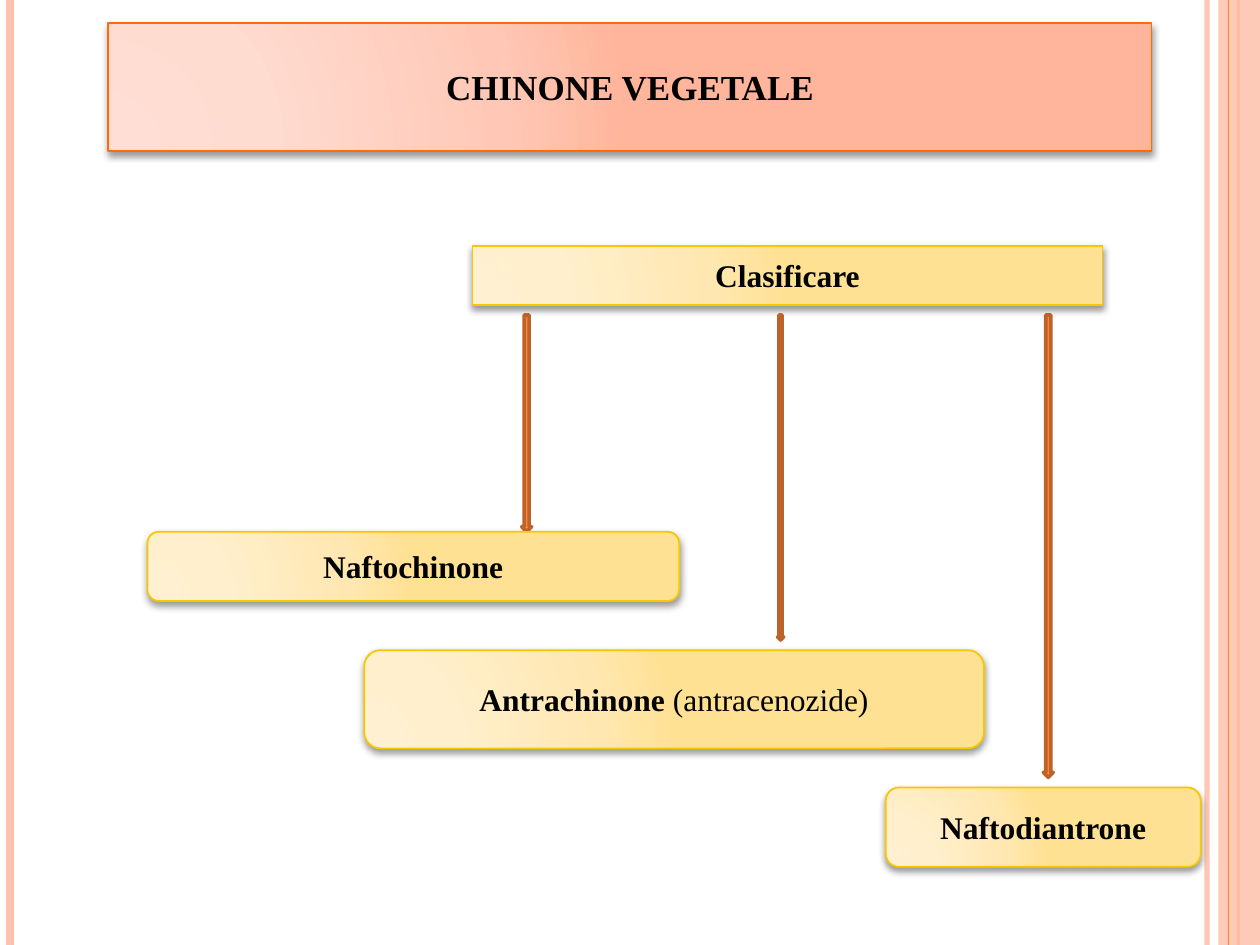
import pptx
import pptx.util
import pptx.dml.color
import pptx.enum.shapes
import pptx.enum.text
import pptx.oxml
import pptx.oxml.ns

SHAPE = pptx.enum.shapes.MSO_SHAPE
WIDTH, HEIGHT = pptx.util.Inches(10), pptx.util.Inches(7.5)
COLS, ROWS = 100, 75
FONT = "Times New Roman"
COLORS = {
    "text": "000000",
    "stripe": "FEC3AE",
    "accent": "FE8637",
    "arrow_edge": "BC6329",
    "title_edge": "FF6B0A",
    "box_edge": "F8C700",
}
GRADIENTS = {
    "title": ["FFDED5", "FFDBD0", "FFC8B6", "FFB59B"],
    "box": ["FFF0D1", "FFEFCC", "FFE7B1", "FFE193"],
}
STOPS = [0, 30, 75, 100]
NS = pptx.oxml.ns.nsdecls("a")


def x(cols):
    return round(WIDTH * cols / COLS)


def y(rows):
    return round(HEIGHT * rows / ROWS)


def rgb(name):
    return pptx.dml.color.RGBColor.from_string(COLORS[name])


def set_alpha(el, percent):
    color = el.find(".//" + pptx.oxml.ns.qn("a:srgbClr"))
    color.append(pptx.oxml.parse_xml(f'<a:alpha {NS} val="{percent * 1000}"/>'))


def add_stripe(s, col, width, color, alpha=None):
    c = s.shapes.add_connector(
        pptx.enum.shapes.MSO_CONNECTOR.STRAIGHT, x(col), 0, x(col), HEIGHT)
    c.line.color.rgb = rgb(color)
    c.line.width = pptx.util.Pt(width)
    c._element.spPr.append(pptx.oxml.parse_xml(f"<a:effectLst {NS}/>"))
    if alpha:
        set_alpha(c._element.spPr, alpha)


def add_shape(s, kind, left, top, width, height):
    sp = s.shapes.add_shape(kind, x(left), y(top), x(width), y(height))
    sp.shadow.inherit = False
    return sp


def add_band(s):
    sp = add_shape(s, SHAPE.RECTANGLE, 96.7, 0, 3.3, ROWS)
    sp.fill.solid()
    sp.fill.fore_color.rgb = rgb("stripe")
    set_alpha(sp._element.spPr, 87)
    sp.line.fill.background()


def add_arrow(s, left, width, bottom):
    top = 25
    sp = add_shape(s, SHAPE.DOWN_ARROW, left, top, width, bottom - top)
    sp.fill.solid()
    sp.fill.fore_color.rgb = rgb("accent")
    sp.line.color.rgb = rgb("arrow_edge")
    sp.line.width = pptx.util.Pt(2)


def set_gradient(sp, colors):
    stops = "".join(
        f'<a:gs pos="{pos * 1000}"><a:srgbClr val="{color}"/></a:gs>'
        for pos, color in zip(STOPS, colors))
    sp.fill.gradient()
    spPr = sp._element.spPr
    old = spPr.find(pptx.oxml.ns.qn("a:gradFill"))
    spPr.replace(old, pptx.oxml.parse_xml(
        f'<a:gradFill {NS} rotWithShape="1"><a:gsLst>{stops}</a:gsLst>'
        '<a:path path="circle"><a:fillToRect l="5000" t="100000" r="120000" b="10000"/>'
        '</a:path></a:gradFill>'))


def set_shadow(sp):
    effects = sp._element.spPr.find(pptx.oxml.ns.qn("a:effectLst"))
    effects.append(pptx.oxml.parse_xml(
        f'<a:outerShdw {NS} blurRad="{pptx.util.Pt(4)}" dist="{pptx.util.Pt(2)}" '
        'dir="5400000" rotWithShape="0"><a:srgbClr val="000000">'
        '<a:alpha val="40000"/></a:srgbClr></a:outerShdw>'))


def add_box(s, kind, place, style, bold, plain="", size=18):
    sp = add_shape(s, kind, *place)
    set_gradient(sp, GRADIENTS[style])
    set_shadow(sp)
    sp.line.color.rgb = rgb(style + "_edge")
    sp.line.width = pptx.util.Pt(1)
    tf = sp.text_frame
    tf.word_wrap = True
    tf.vertical_anchor = pptx.enum.text.MSO_ANCHOR.MIDDLE
    p = tf.paragraphs[0]
    p.alignment = pptx.enum.text.PP_ALIGN.CENTER
    p.font.name = FONT
    p.font.size = pptx.util.Pt(size)
    p.font.color.rgb = rgb("text")
    for text, is_bold in ((bold, True), (plain, False)):
        if text:
            r = p.add_run()
            r.text = text
            r.font.bold = is_bold


def main():
    prs = pptx.Presentation()
    prs.slide_width, prs.slide_height = WIDTH, HEIGHT
    s = prs.slides.add_slide(prs.slide_layouts[6])

    add_stripe(s, 95.8, 3, "stripe", 93)
    add_stripe(s, 0.8, 4.5, "stripe")
    add_stripe(s, 98.3, 1.5, "accent")
    add_band(s)
    add_stripe(s, 97.5, 0.75, "accent")

    add_box(s, SHAPE.RECTANGLE, (37.5, 19.5, 50, 4.7), "box", "Clasificare")
    for left, width, bottom in ((41.4, 0.8, 42.2), (61.7, 0.5, 50.8), (82.8, 0.8, 61.7)):
        add_arrow(s, left, width, bottom)
    for place, bold, plain in (
        ((11.7, 42.2, 42.2, 5.5), "Naftochinone", ""),
        ((28.9, 51.6, 49.2, 7.8), "Antrachinone", " (antracenozide)"),
        ((70.3, 62.5, 25, 6.3), "Naftodiantrone", ""),
    ):
        add_box(s, SHAPE.ROUNDED_RECTANGLE, place, "box", bold, plain)
    add_box(s, SHAPE.RECTANGLE, (8.6, 1.8, 82.8, 10.2), "title", "CHINONE VEGETALE", size=20)

    prs.save("out.pptx")


if __name__ == "__main__":
    main()
